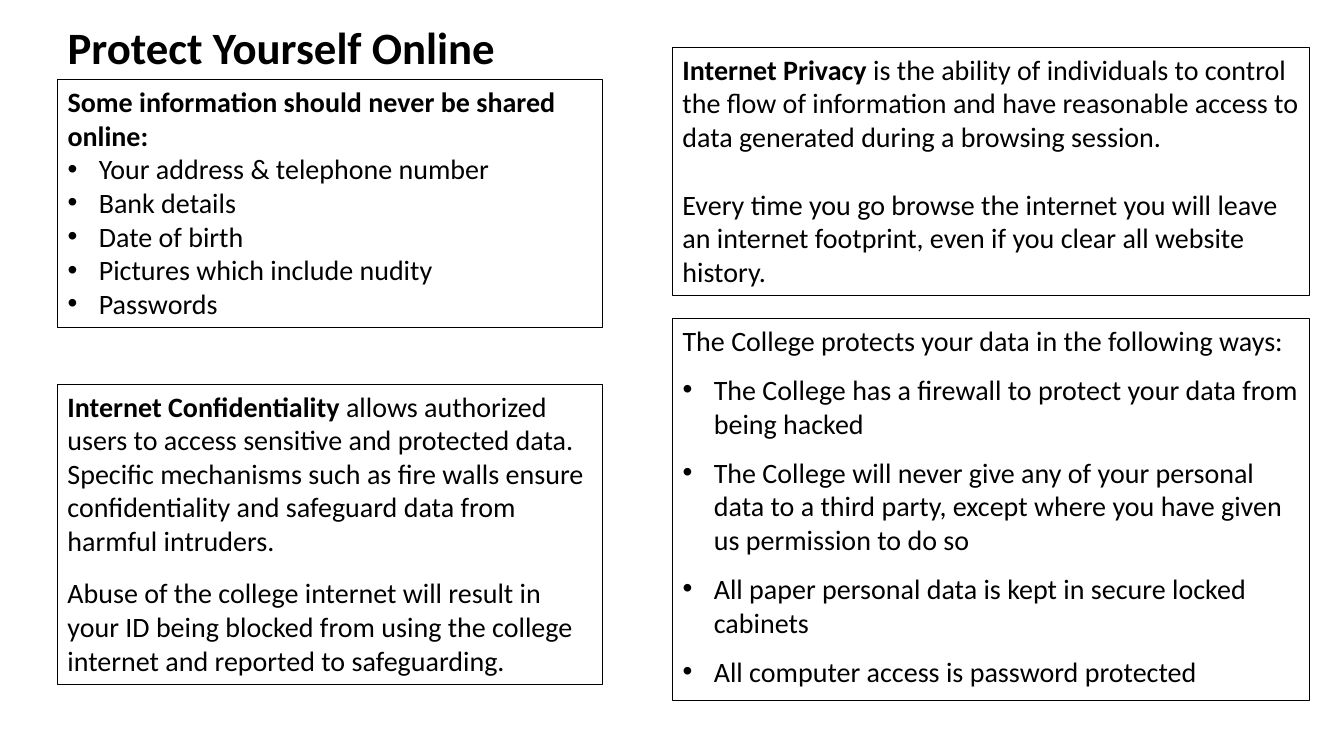
import pptx
import pptx.dml.color
import pptx.enum.text
import pptx.oxml
import pptx.oxml.ns
import pptx.util
from dataclasses import dataclass
from pptx.util import Inches


@dataclass(frozen=True)
class Theme:
    font: str = "Calibri"
    ink: str = "000000"
    paper: str = "FFFFFF"
    title_size: float = 32
    body_size: float = 20
    border: float = 0.75
    indent: float = 0.31


THEME = Theme()

# Layout: two columns, as (left, width) in inches
LEFT_COLUMN = (0.57, 5.41)
RIGHT_COLUMN = (6.67, 6.32)


def rgb(value):
    return pptx.dml.color.RGBColor.from_string(value)


def write(paragraph, text, size=THEME.body_size, bold=False, before=0, bullet=False):
    """Add a formatted run and set the format of its paragraph."""
    paragraph.alignment = pptx.enum.text.PP_ALIGN.LEFT
    paragraph.space_before = pptx.util.Pt(before)
    run = paragraph.add_run()
    run.text = text
    run.font.name = THEME.font
    run.font.size = pptx.util.Pt(size)
    run.font.bold = bold
    run.font.color.rgb = rgb(THEME.ink)
    set_bullet(paragraph, bullet)


def set_bullet(paragraph, bullet):
    properties = paragraph._p.get_or_add_pPr()
    for tag in ("a:buNone", "a:buFont", "a:buChar"):
        for old in properties.findall(pptx.oxml.ns.qn(tag)):
            properties.remove(old)
    indent = Inches(THEME.indent) if bullet else 0
    properties.set("marL", str(indent))
    properties.set("indent", str(-indent))
    marks = ['<a:buFont {} typeface="Arial"/>', '<a:buChar {} char="•"/>'] if bullet else ["<a:buNone {}/>"]
    for mark in marks:
        properties.append(pptx.oxml.parse_xml(mark.format(pptx.oxml.ns.nsdecls("a"))))


def place(holder, box, wrap=True):
    """Move a text holder into its box and return its text frame."""
    holder.left, holder.top, holder.width, holder.height = map(Inches, box)
    frame = holder.text_frame
    frame.auto_size = pptx.enum.text.MSO_AUTO_SIZE.NONE
    frame.vertical_anchor = pptx.enum.text.MSO_ANCHOR.TOP
    frame.word_wrap = wrap
    frame.margin_left = frame.margin_right = Inches(0.1)
    frame.margin_top = frame.margin_bottom = Inches(0.05)
    return frame


def outline(panel):
    panel.line.color.rgb = rgb(THEME.ink)
    panel.line.width = pptx.util.Pt(THEME.border)


def heading(title, box, text):
    frame = place(title, box, wrap=False)
    write(frame.paragraphs[0], text, size=THEME.title_size, bold=True)


def list_panel(body, box, intro, items, bold_intro=False, gap=0):
    """Bordered panel with an opening line and a bulleted list."""
    frame = place(body, box)
    outline(body)
    write(frame.paragraphs[0], intro, bold=bold_intro)
    for item in items:
        write(frame.add_paragraph(), item, before=gap, bullet=True)


def definition_panel(slide, box, term, meaning, remark, gap):
    """Bordered panel that explains a term, followed by a remark."""
    panel = slide.shapes.add_textbox(*map(Inches, box))
    frame = place(panel, box)
    outline(panel)
    write(frame.paragraphs[0], term, bold=True)
    write(frame.paragraphs[0], meaning)
    write(frame.add_paragraph(), remark, before=gap)


def online_safety_slide(deck):
    slide = deck.slides.add_slide(deck.slide_layouts.get_by_name("Two Content"))
    slide.background.fill.solid()
    slide.background.fill.fore_color.rgb = rgb(THEME.paper)
    title, never_share, college_measures = list(slide.placeholders)[:3]
    left, left_width = LEFT_COLUMN
    right, right_width = RIGHT_COLUMN

    # Title
    heading(title, (left, 0.15, 4.48, 0.64), "Protect Yourself Online")

    # Left column: private information, then confidentiality
    list_panel(
        never_share, (left, 0.79, left_width, 2.46),
        "Some information should never be shared online:",
        ["Your address & telephone number", "Bank details", "Date of birth",
         "Pictures which include nudity", "Passwords"],
        bold_intro=True,
    )
    definition_panel(
        slide, (left, 3.81, left_width, 2.98),
        "Internet Confidentiality ",
        "allows authorized users to access sensitive and protected data. Specific "
        "mechanisms such as fire walls ensure confidentiality and safeguard data "
        "from harmful intruders.",
        "Abuse of the college internet will result in your ID being blocked from "
        "using the college internet and reported to safeguarding.",
        gap=13.4,
    )

    # Right column: privacy, then the college's measures
    definition_panel(
        slide, (right, 0.47, right_width, 2.46),
        "Internet Privacy",
        " is the ability of individuals to control the flow of information and have "
        "reasonable access to data generated during a browsing session.",
        "Every time you go browse the internet you will leave an internet footprint, "
        "even if you clear all website history.",
        gap=24.4,
    )
    list_panel(
        college_measures, (right, 3.16, right_width, 3.79),
        "The College protects your data in the following ways:",
        ["The College has a firewall to protect your data from being hacked",
         "The College will never give any of your personal data to a third party, "
         "except where you have given us permission to do so",
         "All paper personal data is kept in secure locked cabinets",
         "All computer access is password protected"],
        gap=11,
    )


def main():
    deck = pptx.Presentation()
    deck.slide_width, deck.slide_height = Inches(13.33), Inches(7.5)
    online_safety_slide(deck)
    deck.save("out.pptx")


if __name__ == "__main__":
    main()
